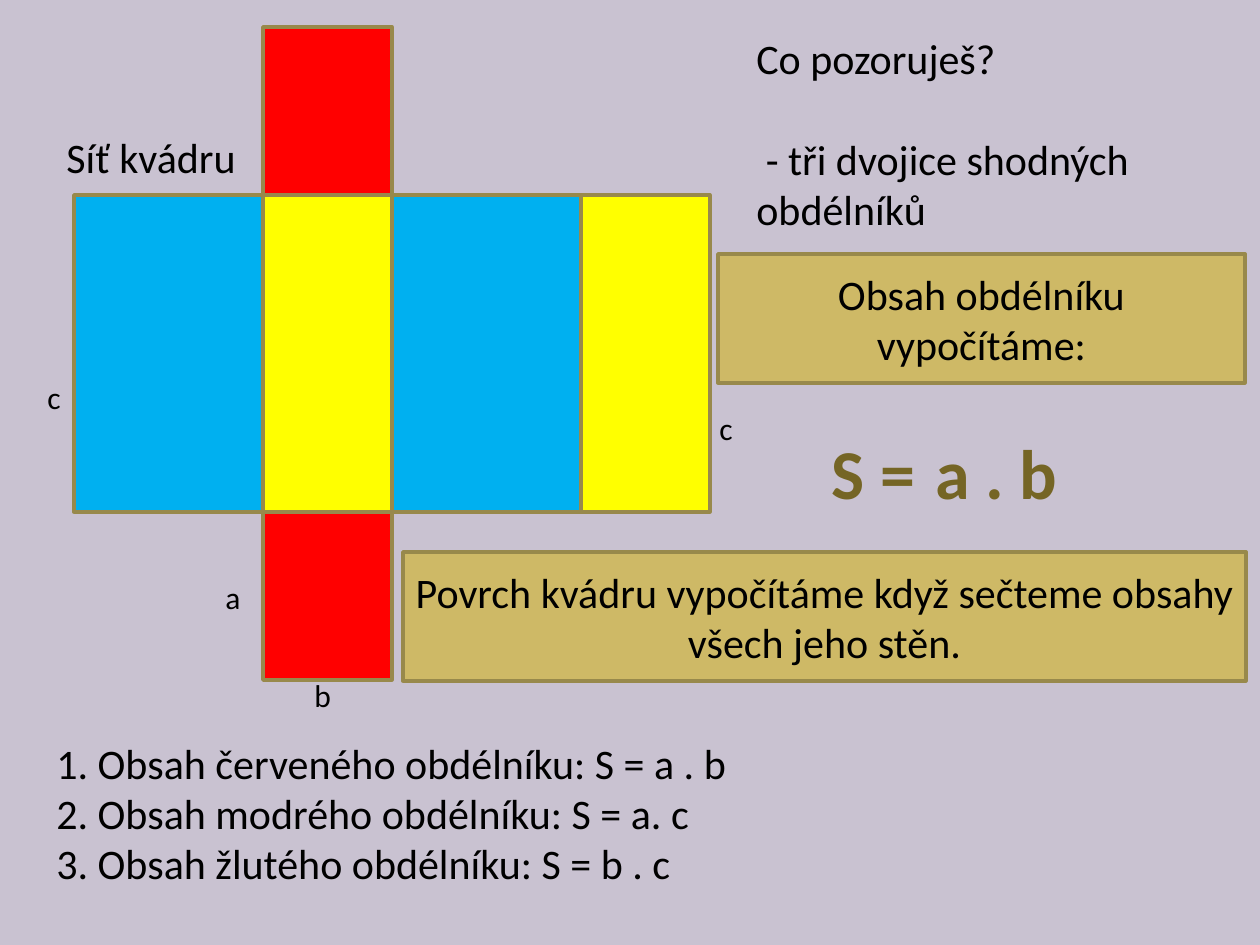
"""Build a slide about the net of a cuboid and its surface area."""
from pptx import Presentation
from pptx import util as u
from pptx.dml.color import RGBColor
from pptx.enum import shapes, text

SCALE = 914400 / 126
COLORS = {"bg": "C9C2D1", "blue": "00B0F0", "yellow": "FFFF00", "red": "FF0000",
          "gold": "CEB966", "edge": "98894B", "formula": "756525", "ink": "000000"}
A, B, C = 189, 129, 317
NET_LEFT, NET_TOP, FLAP = 74, 195, 168


def px(*values):
    """Convert pixels to EMU."""
    return [u.Emu(round(v * SCALE)) for v in values]


def rgb(name):
    """Look up a named colour."""
    return RGBColor.from_string(COLORS[name])


def write(tf, lines, size=24, color="ink", bold=False, align=None):
    """Fill a text frame with one paragraph per line."""
    tf.word_wrap = True
    tf.text = "\n".join(lines)
    for p in tf.paragraphs:
        p.alignment = align
        for r in p.runs:
            r.font.name = "Calibri"
            r.font.size = u.Pt(size)
            r.font.bold = bold
            r.font.color.rgb = rgb(color)


def add_rect(s, box, fill):
    """Add an outlined rectangle."""
    sp = s.shapes.add_shape(shapes.MSO_SHAPE.RECTANGLE, *px(*box))
    sp.shadow.inherit = False
    sp.fill.solid()
    sp.fill.fore_color.rgb = rgb(fill)
    sp.line.color.rgb = rgb("edge")
    sp.line.width = u.Pt(2)
    return sp


def add_note(s, box, line):
    """Add a gold panel with centred text."""
    tf = add_rect(s, box, "gold").text_frame
    tf.vertical_anchor = text.MSO_ANCHOR.MIDDLE
    write(tf, [line], align=text.PP_ALIGN.CENTER)


def add_label(s, box, *lines, **style):
    """Add a text box."""
    tf = s.shapes.add_textbox(*px(*box)).text_frame
    write(tf, lines, **style)
    return tf


def add_net(s):
    """Draw the six faces of the unfolded cuboid."""
    for i in range(2):
        left = NET_LEFT + i * (A + B)
        add_rect(s, (left, NET_TOP, A, C), "blue")
        add_rect(s, (left + A, NET_TOP, B, C), "yellow")
    for top in (NET_TOP - FLAP, NET_TOP + C):
        add_rect(s, (NET_LEFT + A, top, B, FLAP), "red")


def main():
    """Build and save the slide."""
    prs = Presentation()
    prs.slide_width, prs.slide_height = px(1260, 945)
    s = prs.slides.add_slide(prs.slide_layouts[6])
    s.background.fill.solid()
    s.background.fill.fore_color.rgb = rgb("bg")

    add_net(s)
    add_label(s, (54, 125, 268, 63), "Síť kvádru")
    tf = add_label(s, (744, 26, 515, 267), "Co pozoruješ?",
                   " - tři dvojice shodných obdélníků")
    tf.paragraphs[0].space_after = u.Pt(29)
    add_note(s, (718, 254, 527, 129), "Obsah obdélníku vypočítáme:")
    for left, width, line in ((819, 118, "S ="), (907, 248, " a . b")):
        add_label(s, (left, 423, width, 97), line, size=40, color="formula", bold=True)
    add_note(s, (403, 552, 843, 129),
             "Povrch kvádru vypočítáme když sečteme obsahy všech jeho stěn.")
    for left, top, line in ((302, 670, "b"), (213, 572, "a"), (707, 403, "c"), (35, 372, "c")):
        add_label(s, (left, top, 40, 50), line, size=18)
    add_label(s, (44, 731, 1171, 165), "1. Obsah červeného obdélníku: S = a . b",
              "2. Obsah modrého obdélníku: S = a. c",
              "3. Obsah žlutého obdélníku: S = b . c")
    prs.save("out.pptx")


if __name__ == "__main__":
    main()
